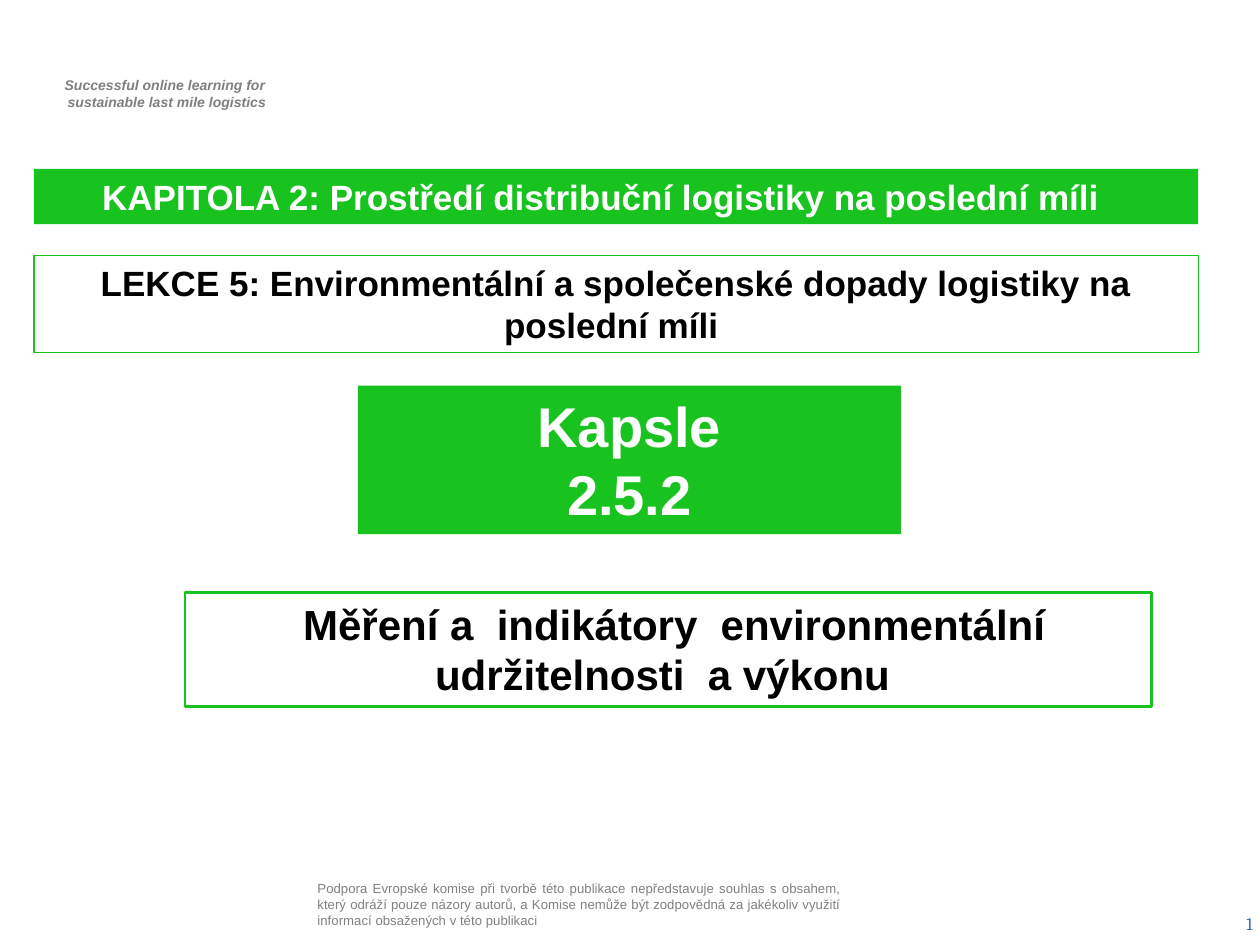
import copy

import pptx
import pptx.util
from pptx.dml.color import RGBColor
from pptx.enum.shapes import MSO_SHAPE
from pptx.enum.text import MSO_ANCHOR, MSO_AUTO_SIZE, PP_ALIGN
from pptx.oxml import parse_xml
from pptx.oxml.ns import nsdecls
from pptx.util import Inches, Pt

COLORS = {
    "green": "18C320",
    "white": "FFFFFF",
    "black": "000000",
    "motto": "7F7F7F",
    "notice": "808080",
    "number": "3366CC",
}


def rgb(name):
    return RGBColor.from_string(COLORS[name])


def place(sp, box):
    for name, value in zip(("left", "top", "width", "height"), box):
        setattr(sp, name, Inches(value))


def write(sp, lines, size, color, align=PP_ALIGN.CENTER, anchor=MSO_ANCHOR.TOP,
          insets=(0.1, 0.05, 0.1, 0.05), **font):
    """Fill a shape with one paragraph per line; insets run left, top, right, bottom."""
    tf = sp.text_frame
    tf.text = "\n".join(lines)
    frame = {"word_wrap": True, "auto_size": MSO_AUTO_SIZE.NONE, "vertical_anchor": anchor}
    for name, value in frame.items():
        setattr(tf, name, value)
    for side, value in zip(("left", "top", "right", "bottom"), insets):
        setattr(tf, f"margin_{side}", Inches(value))
    style = {"name": "Arial", "size": Pt(size), **font}
    for p in tf.paragraphs:
        p.alignment = align
        for r in p.runs:
            for name, value in style.items():
                setattr(r.font, name, value)
            r.font.color.rgb = rgb(color)


def add_label(s, box, lines, size, color, **style):
    sp = s.shapes.add_textbox(*map(Inches, box))
    write(sp, lines, size, color, **style)
    return sp


def add_capsule_title(s, box):
    sp = s.shapes.title
    place(sp, box)
    sp.fill.solid()
    sp.fill.fore_color.rgb = rgb("green")
    write(sp, ["Kapsle", "2.5.2"], 32, "white", bold=True)


def add_banner(s, box, text, size, line_width=None, **style):
    """Green band, or a green outline when a line width is given."""
    sp = s.shapes.add_shape(MSO_SHAPE.RECTANGLE, *map(Inches, box))
    sp.shadow.inherit = False
    if line_width:
        sp.fill.background()
        sp.line.color.rgb = rgb("green")
        sp.line.width = Pt(line_width)
    else:
        sp.fill.solid()
        sp.fill.fore_color.rgb = rgb("green")
        sp.line.fill.background()
    write(sp, [text], size, "black" if line_width else "white", bold=True, **style)


def add_slide_number(s, box):
    sp = add_label(s, box, ["1"], 10, "number", align=PP_ALIGN.RIGHT,
                   anchor=MSO_ANCHOR.MIDDLE, name="Cambria")
    r = sp.text_frame.paragraphs[0].runs[0]._r
    fld = parse_xml(f'<a:fld {nsdecls("a")} type="slidenum" '
                    'id="{B6F15528-21DE-4FAA-801E-634DDDAF4B2B}"/>')
    for part in r:
        fld.append(copy.deepcopy(part))
    r.getparent().replace(r, fld)


def build_slide(prs):
    s = prs.slides.add_slide(prs.slide_layouts[5])
    add_label(s, (0.29, 0.56, 2.03, 0.37),
              ["Successful online learning for ", "sustainable last mile logistics"],
              8, "motto", insets=(0.14, 0.05, 0.1, 0.05), bold=True, italic=True)
    add_label(s, (2.48, 6.98, 4.23, 0.5),
              ["Podpora Evropské komise při tvorbě této publikace nepředstavuje souhlas "
               "s obsahem, který odráží pouze názory autorů, a Komise nemůže být zodpovědná "
               "za jakékoliv využití informací obsažených v této publikaci"],
              7.5, "notice", align=PP_ALIGN.JUSTIFY, insets=(0.04, 0.01, 0.04, 0.04))
    add_slide_number(s, (7.71, 7.13, 2.33, 0.4))
    add_capsule_title(s, (2.84, 3.06, 4.31, 1.18))
    add_banner(s, (1.47, 4.7, 7.67, 0.91),
               " Měření a  indikátory  environmentální udržitelnosti  a výkonu ",
               24, line_width=1.5)
    add_banner(s, (0.27, 1.34, 9.24, 0.44),
               "KAPITOLA 2: Prostředí distribuční logistiky na poslední míli",
               20, insets=(0.1, 0.05, 0.34, 0.05))
    add_banner(s, (0.27, 2.03, 9.24, 0.77),
               "LEKCE 5: Environmentální a společenské dopady logistiky na poslední míli ",
               20, line_width=0.75)


def main():
    prs = pptx.Presentation()
    prs.slide_width, prs.slide_height = Inches(10), Inches(7.5)
    build_slide(prs)
    prs.save("out.pptx")


if __name__ == "__main__":
    main()
